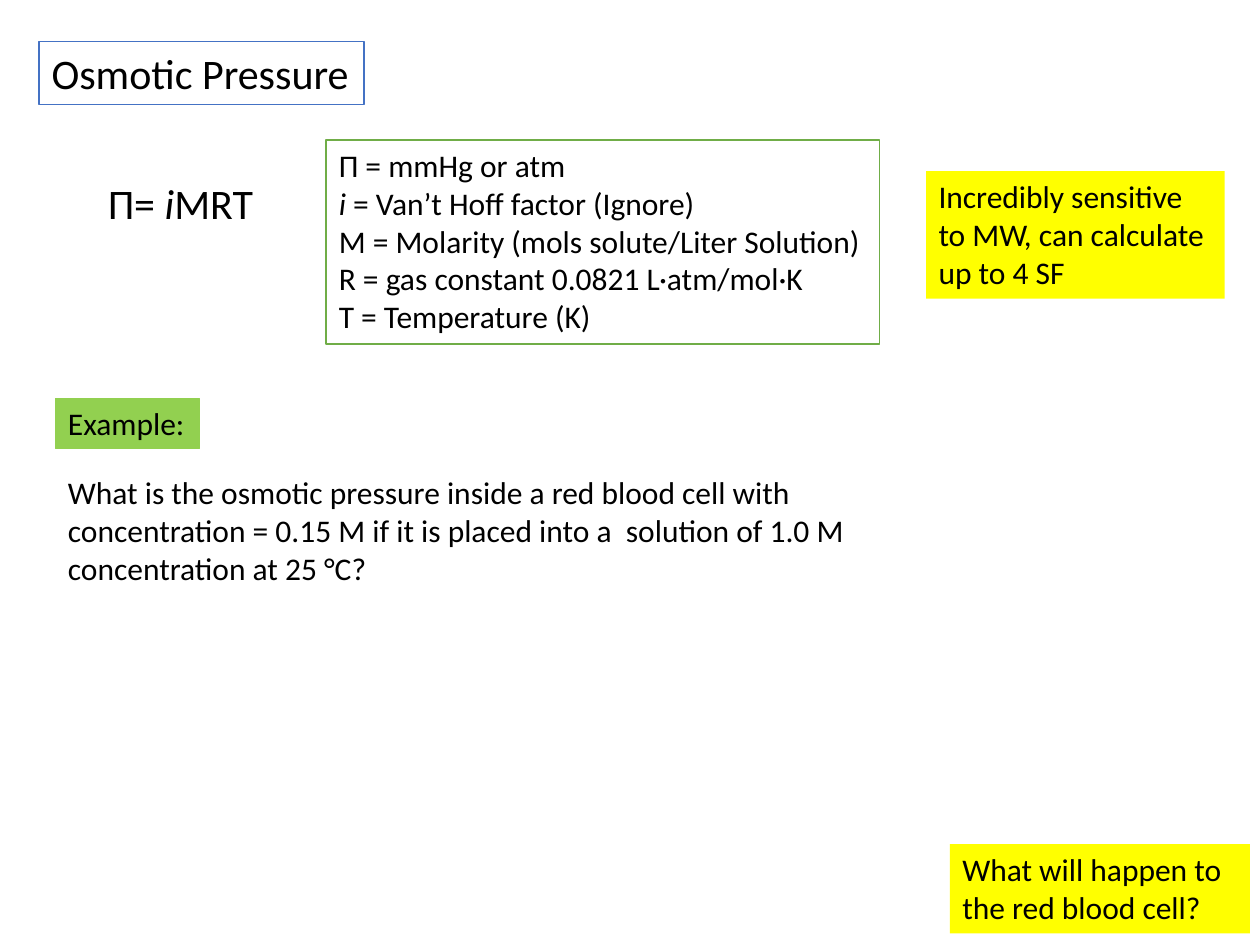
from pptx import Presentation
from pptx.dml.color import RGBColor
from pptx.enum.shapes import MSO_SHAPE
from pptx.enum.text import MSO_ANCHOR, MSO_AUTO_SIZE, PP_ALIGN
from pptx.util import Cm, Pt

COLORS = {
    "text": "000000",
    "paper": "FFFFFF",
    "title_edge": "4472C4",
    "legend_edge": "70AD47",
    "example": "92D050",
    "note": "FFFF00",
}


def color(name):
    return RGBColor.from_string(COLORS[name])


def apply(target, values):
    for name, value in values.items():
        setattr(target, name, value)


class SlideBuilder:
    font = "Calibri"
    large = 24
    normal = 18

    def __init__(self, page):
        self.page = page

    def fill_text(self, shape, lines, size, wrap):
        frame = shape.text_frame
        apply(frame, {
            "word_wrap": wrap,
            "auto_size": MSO_AUTO_SIZE.SHAPE_TO_FIT_TEXT,
            "vertical_anchor": MSO_ANCHOR.TOP,
        })
        for index, line in enumerate(lines):
            para = frame.add_paragraph() if index else frame.paragraphs[0]
            para.alignment = PP_ALIGN.LEFT
            for text, italic in line:
                span = para.add_run()
                span.text = text
                apply(span.font, {"name": self.font, "size": Pt(size), "italic": italic})
                span.font.color.rgb = color("text")

    def label(self, place, lines, size=normal, wrap=True):
        box = self.page.shapes.add_textbox(*map(Cm, place))
        self.fill_text(box, lines, size, wrap)

    def panel(self, place, lines, fill, edge=None, width=1, size=normal, wrap=True):
        box = self.page.shapes.add_shape(MSO_SHAPE.RECTANGLE, *map(Cm, place))
        box.shadow.inherit = False
        box.fill.solid()
        box.fill.fore_color.rgb = color(fill)
        if edge:
            box.line.color.rgb = color(edge)
            box.line.width = Pt(width)
        else:
            box.line.fill.background()
        self.fill_text(box, lines, size, wrap)


def plain(text):
    return [(text, False)]


def main():
    deck = Presentation()
    apply(deck, {"slide_width": Cm(25.4), "slide_height": Cm(19.05)})
    builder = SlideBuilder(deck.slides.add_slide(deck.slide_layouts[6]))

    builder.panel((0.79, 0.84, 6.55, 1.27), [plain("Osmotic Pressure")],
                  "paper", "title_edge", size=builder.large, wrap=False)
    builder.label((1.93, 3.45, 3.45, 1.27),
                  [[("Π= ", False), ("i", True), ("MRT", False)]],
                  size=builder.large, wrap=False)
    legend = [
        plain("Π = mmHg or atm"),
        [("i", True), (" = Van’t Hoff factor (Ignore)", False)],
        plain("M = Molarity (mols solute/Liter Solution)"),
        plain("R = gas constant 0.0821 L·atm/mol·K"),
        plain("T = Temperature (K)"),
    ]
    builder.panel((6.58, 2.82, 11.15, 4.11), legend, "paper", "legend_edge", wrap=False)
    builder.panel((1.12, 8.03, 2.9, 1.02), [plain("Example:")],
                  "example", "example", width=0.75, wrap=False)
    builder.label((1.12, 9.42, 16.43, 2.57), [plain(
        "What is the osmotic pressure inside a red blood cell with "
        "concentration = 0.15 M if it is placed into a  solution of 1.0 M "
        "concentration at 25 °C?")])

    notes = [
        ((19.15, 17.02, 6.05, 1.8), "What will happen to the red blood cell?"),
        ((18.67, 3.45, 6.02, 2.57), "Incredibly sensitive to MW, can calculate up to 4 SF"),
    ]
    for place, text in notes:
        builder.panel(place, [plain(text)], "note")

    deck.save("out.pptx")


if __name__ == "__main__":
    main()
